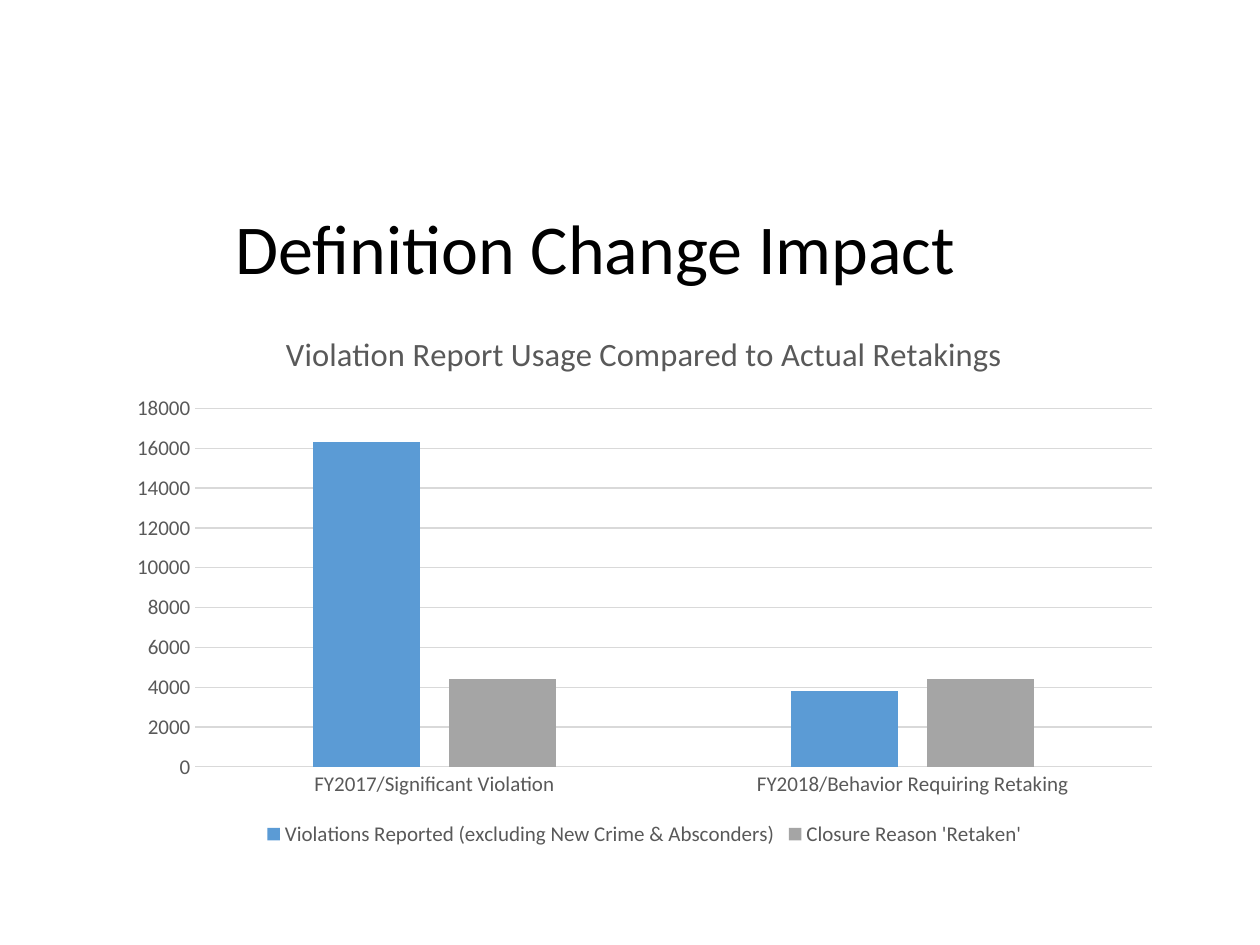
"""Build a slide with a clustered column chart of violation reports and retakings."""
from typing import Any, NamedTuple

from pptx import Presentation
from pptx import util as u
from pptx.chart.data import CategoryChartData
from pptx.dml.color import RGBColor
from pptx.enum import chart as ch, text

BLACK = RGBColor(0x00, 0x00, 0x00)
DARK = RGBColor(0x59, 0x59, 0x59)
PALE = RGBColor(0xD9, 0xD9, 0xD9)
BLUE = RGBColor(0x5B, 0x9B, 0xD5)
GREY = RGBColor(0xA5, 0xA5, 0xA5)
FACE = "Calibri"
WIDE, HIGH = u.Inches(10), u.Inches(7.5)


class Box(NamedTuple):
    """Left, top, width and height as percentages of the slide."""
    left: float
    top: float
    width: float
    height: float

    def place(self) -> dict[str, int]:
        sides = (WIDE, HIGH, WIDE, HIGH)
        return {key: int(share * side / 100)
                for key, share, side in zip(self._fields, self, sides)}


class Bar(NamedTuple):
    """Name, values and colour of one series."""
    name: str
    vals: tuple[int, ...]
    tint: RGBColor


HEAD = Box(17.7, 21.6, 75.4, 10.13)
PLOT = Box(9.2, 32.53, 83.9, 57.6)
CATS = ("FY2017/Significant Violation", "FY2018/Behavior Requiring Retaking")
BARS = (
    Bar("Violations Reported (excluding New Crime & Absconders)", (16300, 3800), BLUE),
    Bar("Closure Reason 'Retaken'", (4400, 4400), GREY),
)


def apply(item: Any, **vals: Any) -> None:
    """Set each named value on the item."""
    for key, val in vals.items():
        setattr(item, key, val)


def style(font: Any, size: float, tint: RGBColor) -> None:
    """Set face, size and colour of a font."""
    apply(font, name=FACE, size=u.Pt(size), bold=False)
    font.color.rgb = tint


def rule(line: Any) -> None:
    """Draw a thin pale line."""
    line.color.rgb = PALE
    line.width = u.Pt(0.75)


def add_head(slide: Any) -> None:
    """Move and format the title."""
    head = slide.shapes.title
    apply(head, **HEAD.place())
    frame = head.text_frame
    frame.text = "Definition Change Impact"
    apply(frame, vertical_anchor=text.MSO_ANCHOR.MIDDLE, word_wrap=True,
          auto_size=text.MSO_AUTO_SIZE.NONE)
    para = frame.paragraphs[0]
    apply(para, alignment=text.PP_ALIGN.LEFT, line_spacing=0.9)
    style(para.runs[0].font, 40, BLACK)


def add_plot(slide: Any) -> None:
    """Add the column chart."""
    data = CategoryChartData()
    data.categories = CATS
    for bar in BARS:
        data.add_series(bar.name, bar.vals)
    box = PLOT.place()
    chart = slide.shapes.add_chart(
        ch.XL_CHART_TYPE.COLUMN_CLUSTERED, box["left"], box["top"],
        box["width"], box["height"], data).chart
    style(chart.font, 10, BLACK)

    apply(chart, has_title=True, has_legend=True)
    frame = chart.chart_title.text_frame
    frame.text = "Violation Report Usage Compared to Actual Retakings"
    style(frame.paragraphs[0].runs[0].font, 18.6, DARK)
    apply(chart.legend, position=ch.XL_LEGEND_POSITION.BOTTOM, include_in_layout=False)
    style(chart.legend.font, 12, DARK)

    for axis in (chart.category_axis, chart.value_axis):
        apply(axis, major_tick_mark=ch.XL_TICK_MARK.NONE,
              minor_tick_mark=ch.XL_TICK_MARK.NONE)
        style(axis.tick_labels.font, 12, DARK)
    rule(chart.category_axis.format.line)
    axis = chart.value_axis
    apply(axis, minimum_scale=0, maximum_scale=18000, major_unit=2000)
    axis.format.line.fill.background()
    rule(axis.major_gridlines.format.line)

    plot = chart.plots[0]
    apply(plot, gap_width=219, overlap=-27, vary_by_categories=False)
    for item, bar in zip(plot.series, BARS):
        item.format.fill.solid()
        item.format.fill.fore_color.rgb = bar.tint


def main() -> None:
    """Build and save the slide."""
    deck = Presentation()
    apply(deck, slide_width=WIDE, slide_height=HIGH)
    slide = deck.slides.add_slide(deck.slide_layouts.get_by_name("Title Only"))
    add_head(slide)
    add_plot(slide)
    deck.save("out.pptx")


if __name__ == "__main__":
    main()
